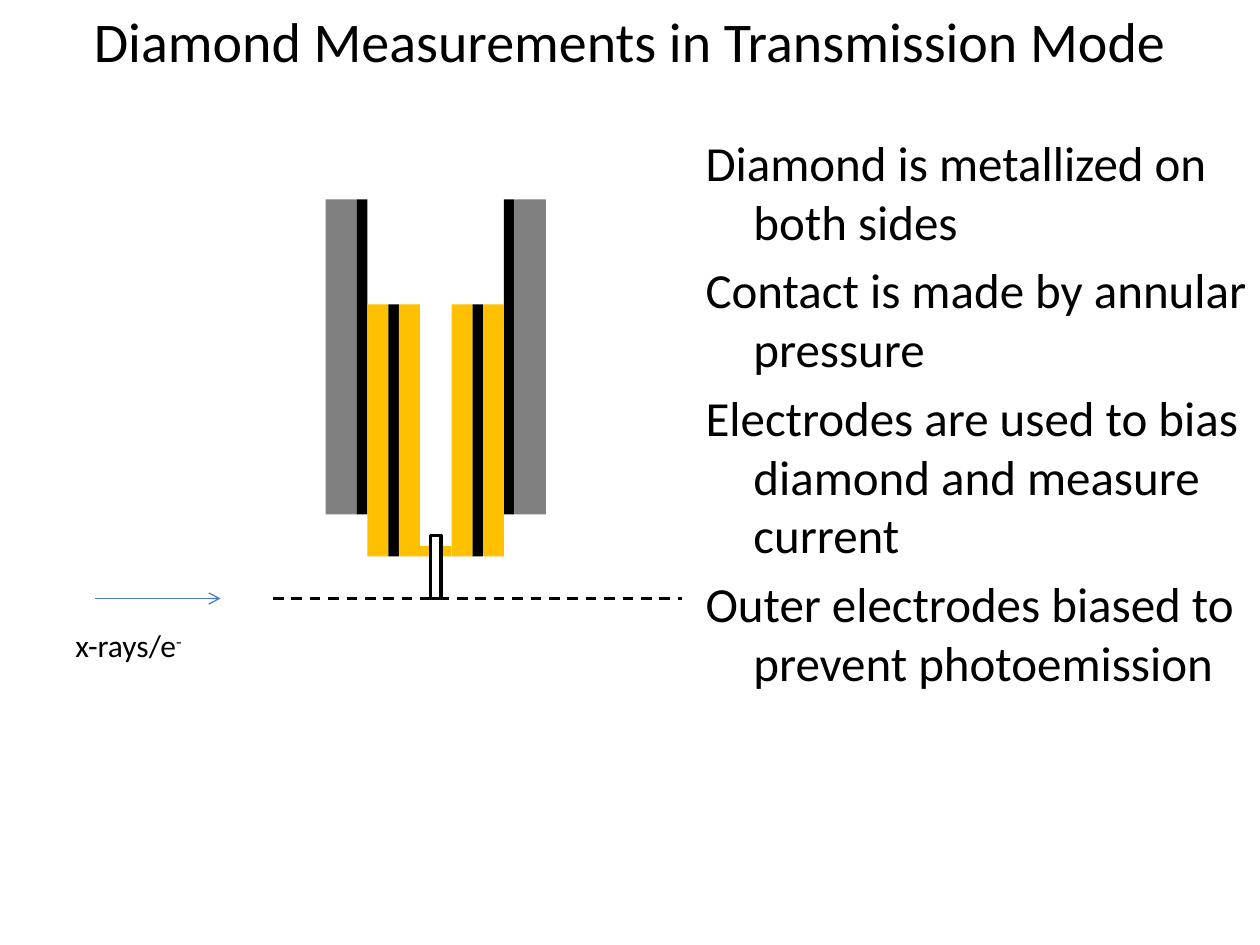
from lxml.etree import SubElement
from pptx import Presentation
from pptx.dml.color import RGBColor
from pptx.enum.dml import MSO_LINE
from pptx.enum.shapes import MSO_CONNECTOR, MSO_SHAPE
from pptx.enum.text import MSO_ANCHOR, MSO_AUTO_SIZE, PP_ALIGN
from pptx.oxml.ns import qn
from pptx.util import Inches, Pt

COLORS = {"text": "000000", "housing": "808080", "insulator": "000000",
          "electrode": "FFC000", "outline": "000000", "beam": "4B7EBC"}
FONT = "Calibri"

TITLE = "Diamond Measurements in Transmission Mode"
POINTS = [
    "Diamond is metallized on both sides",
    "Contact is made by annular pressure",
    "Electrodes are used to bias diamond and measure current",
    "Outer electrodes biased to prevent photoemission",
]
BEAM_LABEL = [("x-rays/e", False), ("-", True)]  # text, superscript

# The holder is drawn on a grid of 1/12 inch: left, top, width, height
GRID = 12
LEFT_HALF = [
    ("housing", 31, 19, 3, 30),
    ("insulator", 34, 19, 1, 30),
    ("electrode", 35, 29, 2, 24),
    ("insulator", 37, 29, 1, 24),
    ("electrode", 38, 29, 2, 24),
    ("electrode", 40, 52, 1, 1),
]
DIAMOND = (41, 51, 1, 6)
AXIS = (26, 65, 57)  # from x, to x, y
BEAM = (9, 21, 57)


def color(name):
    return RGBColor.from_string(COLORS[name])


def grid(*cells):
    return [Inches(cell / GRID) for cell in cells]


def add_text(paragraph, text, size, align=None, superscript=False):
    if align is not None:
        paragraph.alignment = align
    run = paragraph.add_run()
    run.text = text
    run.font.name = FONT
    run.font.size = Pt(size)
    run.font.color.rgb = color("text")
    if superscript:
        run._r.get_or_add_rPr().set("baseline", "30000")


def place(shape, left, top, width, height):
    shape.left, shape.top = Inches(left), Inches(top)
    shape.width, shape.height = Inches(width), Inches(height)


def add_block(slide, cells, fill=None, outline=None):
    block = slide.shapes.add_shape(MSO_SHAPE.RECTANGLE, *grid(*cells))
    block.shadow.inherit = False
    if fill:
        block.fill.solid()
        block.fill.fore_color.rgb = color(fill)
    else:
        block.fill.background()
    if outline:
        block.line.color.rgb = color(outline)
        block.line.width = Pt(2)
    else:
        block.line.fill.background()


def add_line(slide, span, name, width, dash=None, arrow=False):
    start, end, y = span
    line = slide.shapes.add_connector(MSO_CONNECTOR.STRAIGHT, *grid(start, y, end, y))
    line.line.color.rgb = color(name)
    line.line.width = Pt(width)
    if dash:
        line.line.dash_style = dash
    if arrow:
        SubElement(line.line._get_or_add_ln(), qn("a:tailEnd"), type="arrow")
    SubElement(line._element.spPr, qn("a:effectLst"))


def add_points(body):
    place(body, 5.5, 1, 4.5, 6.25)
    frame = body.text_frame
    frame.auto_size = MSO_AUTO_SIZE.NONE
    for index, point in enumerate(POINTS):
        paragraph = frame.add_paragraph() if index else frame.paragraphs[0]
        properties = paragraph._p.get_or_add_pPr()
        properties.set("marL", str(Inches(0.38)))
        properties.set("indent", str(-Inches(0.38)))
        spacing = SubElement(properties, qn("a:spcBef"))
        SubElement(spacing, qn("a:spcPct"), val="20000")
        SubElement(properties, qn("a:buNone"))
        add_text(paragraph, point, 28)


def main():
    prs = Presentation()
    prs.slide_width, prs.slide_height = Inches(10), Inches(7.5)
    slide = prs.slides.add_slide(prs.slide_layouts[1])

    title = slide.shapes.title
    place(title, 0.5, 0, 9, 0.78)
    title.text_frame.auto_size = MSO_AUTO_SIZE.NONE
    title.text_frame.vertical_anchor = MSO_ANCHOR.TOP
    add_text(title.text_frame.paragraphs[0], TITLE, 32, align=PP_ALIGN.CENTER)
    add_points(slide.placeholders[1])

    add_line(slide, AXIS, "outline", 1.5, dash=MSO_LINE.DASH)
    mirror = 2 * DIAMOND[0] + DIAMOND[2]
    for fill, left, top, width, height in LEFT_HALF:
        for x in (left, mirror - left - width):
            add_block(slide, (x, top, width, height), fill=fill)
    add_block(slide, DIAMOND, outline="outline")
    add_line(slide, BEAM, "beam", 0.75, arrow=True)

    label = slide.shapes.add_textbox(Inches(0.5), Inches(4.92), Inches(1.33), Inches(0.4))
    label.text_frame.word_wrap = True
    label.text_frame.auto_size = MSO_AUTO_SIZE.SHAPE_TO_FIT_TEXT
    for text, superscript in BEAM_LABEL:
        add_text(label.text_frame.paragraphs[0], text, 18, superscript=superscript)

    prs.save("out.pptx")


if __name__ == "__main__":
    main()
